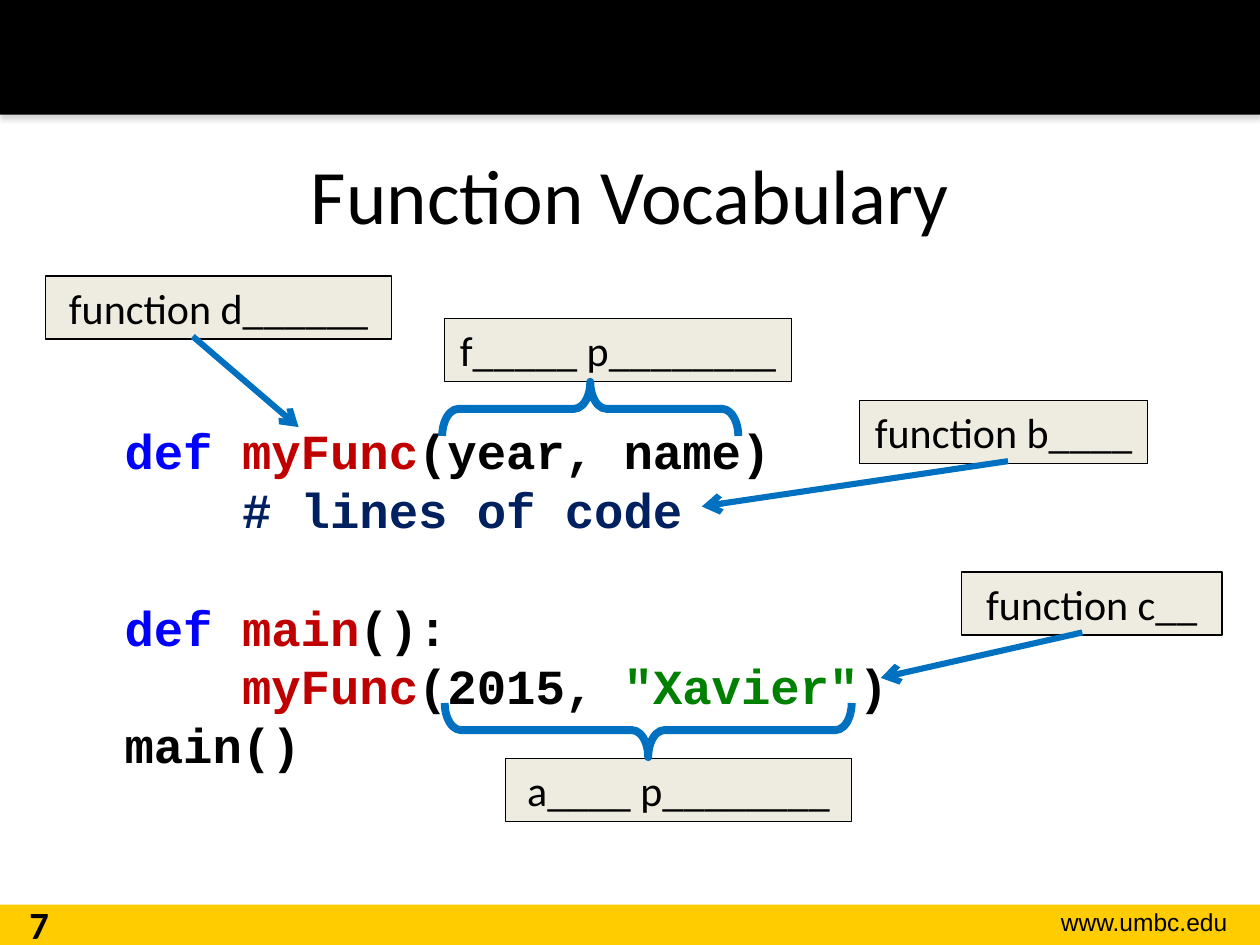
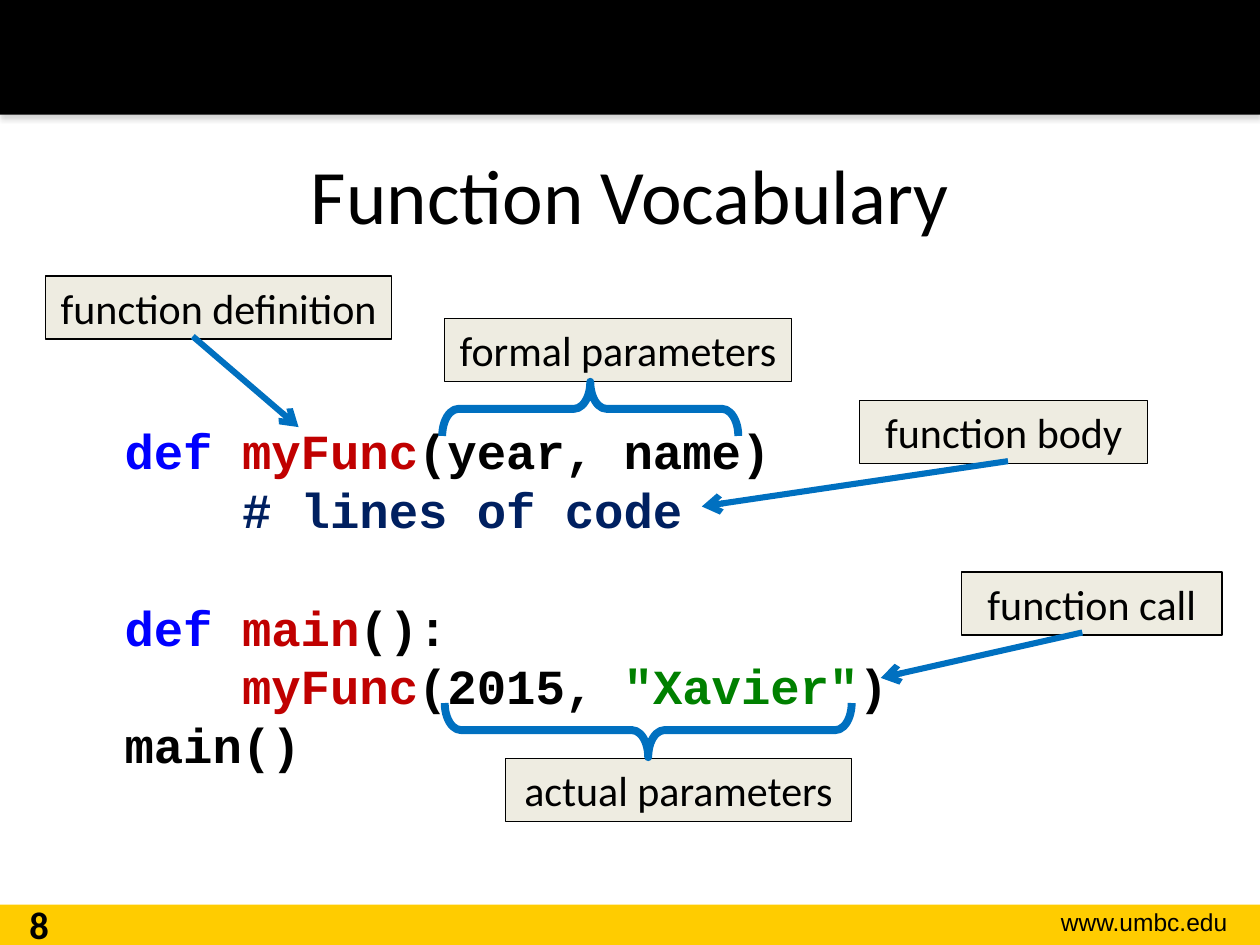
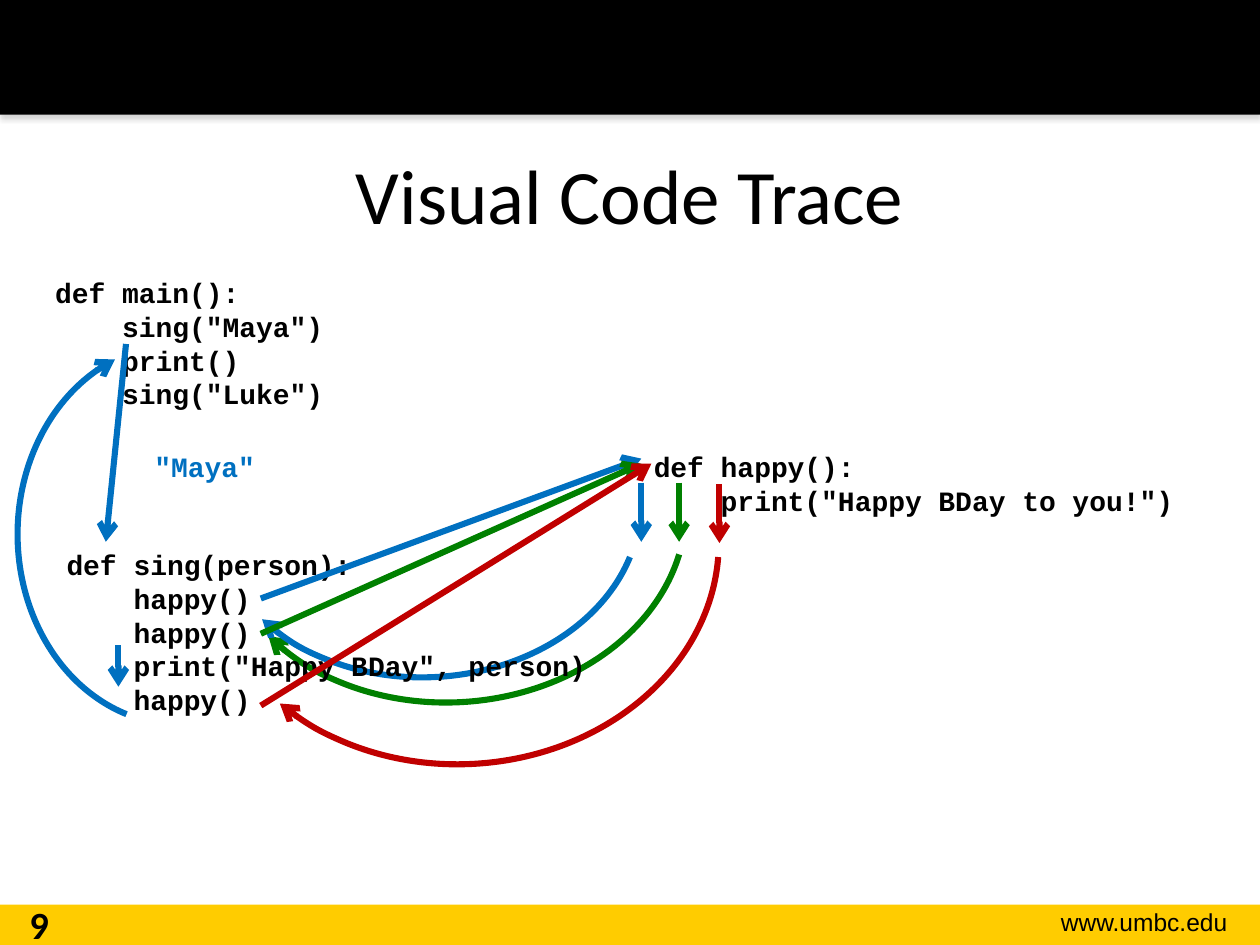
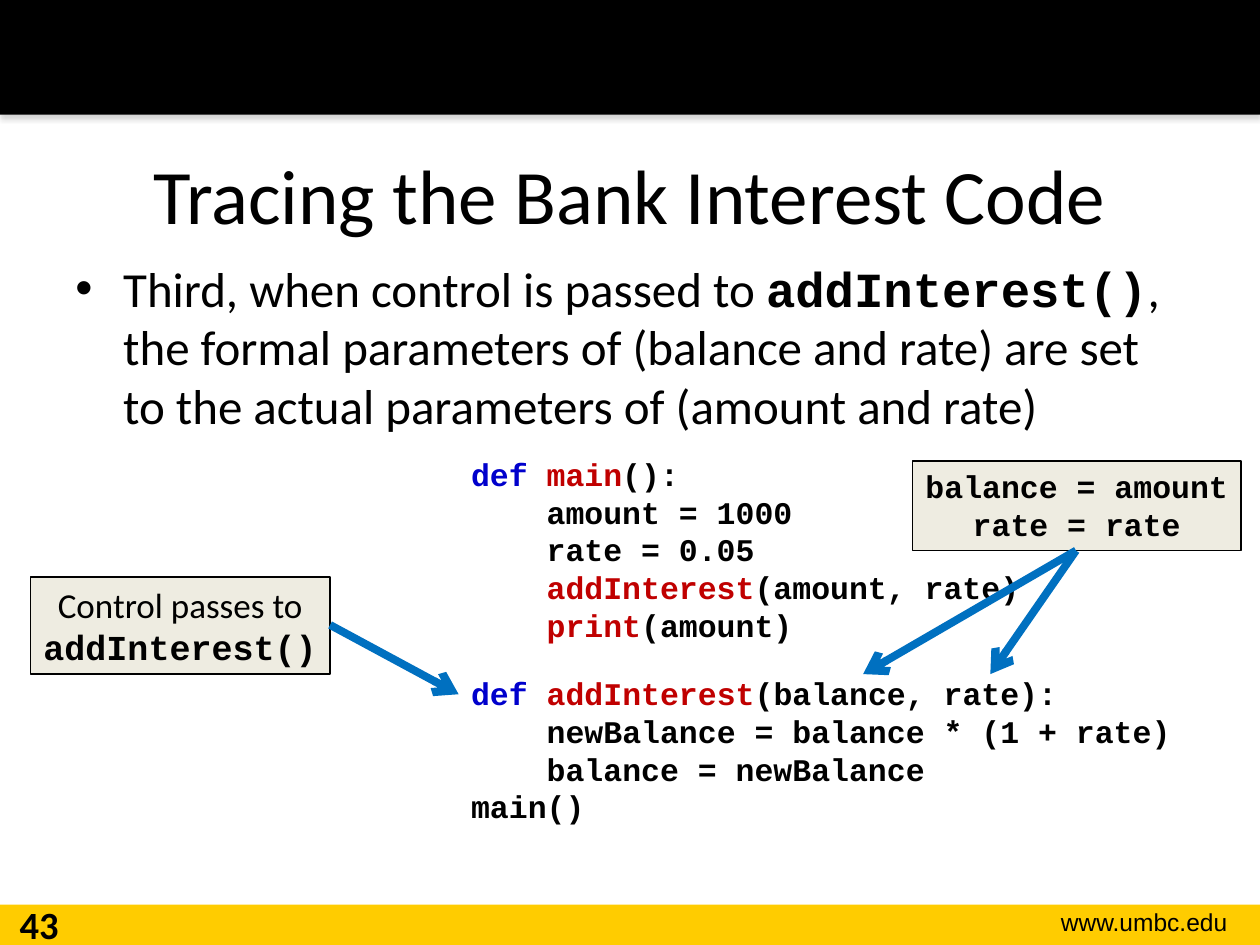
"""Build four lecture slides on function vocabulary and code tracing."""
from lxml import etree
from pptx import Presentation
from pptx.dml.color import RGBColor
from pptx.enum.shapes import MSO_CONNECTOR as Connector, MSO_SHAPE as Shape
from pptx.enum.text import MSO_ANCHOR as Anchor, PP_ALIGN as Align
from pptx.oxml import parse_xml
from pptx.oxml.ns import nsdecls, qn
from pptx.util import Inches, Pt

BLACK = RGBColor(0x00, 0x00, 0x00)
GOLD = RGBColor(0xFF, 0xCC, 0x00)
CREAM = RGBColor(0xEE, 0xEC, 0xE1)
BLUE = RGBColor(0x00, 0x70, 0xC0)
GREEN = RGBColor(0x00, 0x80, 0x00)
RED = RGBColor(0xC0, 0x00, 0x00)
NAVY = RGBColor(0x00, 0x20, 0x60)
BRIGHT_BLUE = RGBColor(0x00, 0x00, 0xFF)
DEEP_BLUE = RGBColor(0x00, 0x00, 0xCC)

PLAIN = {"name": "Calibri", "bold": False, "color": BLACK}
NUMBER = PLAIN | {"bold": True}
FOOTER = PLAIN | {"name": "Arial"}
CODE = {"name": "Courier New", "bold": True, "color": BLACK}
KEYWORD = CODE | {"color": BRIGHT_BLUE}
TRACE_KEYWORD = CODE | {"color": DEEP_BLUE}
NAME = CODE | {"color": RED}
COMMENT = CODE | {"color": NAVY}
STRING = CODE | {"color": GREEN}
ARGUMENT = CODE | {"color": BLUE}


def write(frame, paragraphs, size, align=Align.LEFT):
    """Fill a text frame with paragraphs made of (text, format) spans."""
    frame.word_wrap = True
    for index, spans in enumerate(paragraphs):
        para = frame.paragraphs[0] if index == 0 else frame.add_paragraph()
        para.alignment = align
        for text, style in spans:
            span = para.add_run()
            span.text = text
            span.font.size = Pt(size)
            for key, value in style.items():
                if key == "color":
                    span.font.color.rgb = value
                else:
                    setattr(span.font, key, value)


def stroke(shape, color, width, arrow=True):
    """Give a shape or connector a plain line, with an arrowhead if wanted."""
    shape.line.color.rgb = color
    shape.line.width = Pt(width)
    properties = shape.element.spPr
    if arrow:
        etree.SubElement(properties.find(qn("a:ln")), qn("a:tailEnd"), type="arrow")
    etree.SubElement(properties, qn("a:effectLst"))


deck = Presentation()
deck.slide_width, deck.slide_height = Inches(10), Inches(7.5)
layout = deck.slide_layouts[5]

pages = []
for title, number in [
    ("Function Vocabulary", 7),
    ("Function Vocabulary", 8),
    ("Visual Code Trace", 9),
    ("Tracing the Bank Interest Code", 43),
]:
    page = deck.slides.add_slide(layout)
    heading = page.shapes.title
    heading.left, heading.top = Inches(0.5), Inches(0.91)
    heading.width, heading.height = Inches(9), Inches(1.25)
    heading.text_frame.vertical_anchor = Anchor.MIDDLE
    write(heading.text_frame, [[(title, PLAIN)]], 44, Align.CENTER)
    box = page.shapes.add_textbox(0, Inches(7.1), Inches(0.62), Inches(0.4))
    write(box.text_frame, [[(str(number), NUMBER)]], 22, Align.CENTER)
    pages.append(page)
blanks_page, answers_page, song_page, interest_page = pages

shared = []
for top, height, color in [(7.18, 0.32, GOLD), (0, 0.91, BLACK)]:
    band = blanks_page.shapes.add_shape(
        Shape.RECTANGLE, 0, Inches(top), deck.slide_width, Inches(height))
    band.shadow.inherit = False
    band.fill.solid()
    band.fill.fore_color.rgb = color
    band.line.fill.background()
    shared.append(band)
shared[-1].element.spPr.find(qn("a:effectLst")).append(parse_xml(
    f'<a:outerShdw {nsdecls("a")} blurRad="{Pt(3.1)}" dist="{Pt(1.8)}" dir="5400000" '
    'rotWithShape="0"><a:srgbClr val="808080"><a:alpha val="35000"/></a:srgbClr>'
    '</a:outerShdw>'))
address = blanks_page.shapes.add_textbox(
    Inches(7.85), Inches(7.15), Inches(1.99), Inches(0.34))
write(address.text_frame, [[("www.umbc.edu", FOOTER)]], 14, Align.RIGHT)
shared.append(address)
for item in shared:
    layout.element.cSld.spTree.append(item.element)

for left, top, width, height, rotation, start, end, color in [
    (2.07, 2.2, 3.01, 3.74, 267.4, 61.74, 143.08, GREEN),
    (2.04, 2.33, 2.69, 3.4, 267.4, 63.72, 143.08, BLUE),
    (0.14, 2.73, 2.56, 3.02, 0, 63.72, 149.96, BLUE),
    (1.93, 2.29, 3.46, 4.09, 267.4, 57, 139, RED),
]:
    arc = song_page.shapes.add_shape(
        Shape.ARC, Inches(left), Inches(top), Inches(width), Inches(height))
    arc.rotation = rotation
    arc.adjustments[0], arc.adjustments[1] = start, end
    arc.fill.background()
    stroke(arc, color, 3.5)

vocabulary_code = [
    [("def ", KEYWORD), ("myFunc", NAME), ("(year, name)", CODE)],
    [("    ", CODE), ("# lines of code", COMMENT)],
    [("def ", KEYWORD), ("main", NAME), ("():", CODE)],
    [("    ", CODE), ("myFunc", NAME), ("(2015, ", CODE), ('"Xavier"', STRING), (")", CODE)],
    [("main()", CODE)],
]
for page in (blanks_page, answers_page):
    box = page.shapes.add_textbox(Inches(0.89), Inches(3.29), Inches(8.21), Inches(2.93))
    write(box.text_frame, vocabulary_code, 28)
    box.text_frame.paragraphs[2].space_before = Pt(33.5)

for left, top, width, height, lines in [
    (0.34, 2.14, 2.8, 1.18,
     ["def main():", '    sing("Maya")', "    print()", '    sing("Luke")']),
    (0.43, 4.3, 4.44, 1.45,
     ["def sing(person):", "    happy()", "    happy()",
      '    print("Happy BDay", person)', "    happy()"]),
    (5.09, 3.52, 4.41, 0.64, ["def happy():", '    print("Happy BDay to you!")']),
]:
    box = song_page.shapes.add_textbox(
        Inches(left), Inches(top), Inches(width), Inches(height))
    write(box.text_frame, [[(line, CODE)] for line in lines], 16)
box = song_page.shapes.add_textbox(Inches(0.89), Inches(3.52), Inches(1.47), Inches(0.37))
write(box.text_frame, [[('"Maya"', ARGUMENT)]], 16, Align.CENTER)

body = interest_page.shapes.add_textbox(Inches(0.5), Inches(2), Inches(9), Inches(4.94))
bullet = body.text_frame.paragraphs[0]
indent = bullet.element.get_or_add_pPr() if hasattr(bullet, "element") else bullet._p.get_or_add_pPr()
indent.set("marL", str(Inches(0.38)))
indent.set("indent", str(Inches(-0.38)))
etree.SubElement(indent, qn("a:buFont"), typeface="Arial")
etree.SubElement(indent, qn("a:buChar"), char="•")
write(body.text_frame, [[
    ("Third, when control is passed to ", PLAIN),
    ("addInterest()", CODE),
    (", the formal parameters of (balance and rate) are set "
     "to the actual parameters of (amount and rate)", PLAIN),
]], 28)

for top, width, height, paragraphs in [
    (3.56, 4.57, 1.62, [
        [("def ", TRACE_KEYWORD), ("main", NAME), ("():", CODE)],
        [("    amount = 1000", CODE)],
        [("    rate = 0.05", CODE)],
        [("    ", CODE), ("addInterest", NAME), ("(amount, rate)", CODE)],
        [("    ", CODE), ("print", NAME), ("(amount)", CODE)],
    ]),
    (5.3, 5.78, 1.31, [
        [("def ", TRACE_KEYWORD), ("addInterest", NAME), ("(balance, rate):", CODE)],
        [("    newBalance = balance * (1 + rate)", CODE)],
        [("    balance = newBalance", CODE)],
        [("main()", CODE)],
    ]),
]:
    box = interest_page.shapes.add_textbox(
        Inches(3.64), Inches(top), Inches(width), Inches(height))
    write(box.text_frame, paragraphs, 18)

callouts = [
    (interest_page, 0.24, 4.58, 2.38, 0.77, 20,
     [[("Control passes to ", PLAIN), ("addInterest()", CODE)]]),
    (interest_page, 7.24, 3.66, 2.61, 0.71, 18,
     [[("balance = amount", CODE)], [("rate = rate", CODE)]]),
]
for left, top, width, blank, answer in [
    (0.36, 2.19, 2.75, "function d______", "function definition"),
    (3.53, 2.53, 2.75, "f_____ p________", "formal parameters"),
    (4.01, 6.02, 2.75, "a____ p________", "actual parameters"),
    (6.82, 3.18, 2.29, "function b____", "function body"),
    (7.63, 4.54, 2.07, "function c__", "function call"),
]:
    for page, label in ((blanks_page, blank), (answers_page, answer)):
        callouts.append((page, left, top, width, 0.5, 24, [[(label, PLAIN)]]))
for page, left, top, width, height, size, paragraphs in callouts:
    callout = page.shapes.add_shape(
        Shape.RECTANGLE, Inches(left), Inches(top), Inches(width), Inches(height))
    callout.fill.solid()
    callout.fill.fore_color.rgb = CREAM
    stroke(callout, BLACK, 0.75, arrow=False)
    callout.text_frame.vertical_anchor = Anchor.TOP
    write(callout.text_frame, paragraphs, size, Align.CENTER)

for page in (blanks_page, answers_page):
    for left, top, height, rotation in [(4.47, 2.07, 2.35, 90), (4.93, 4.18, 3.23, 270)]:
        brace = page.shapes.add_shape(
            Shape.RIGHT_BRACE, Inches(left), Inches(top), Inches(0.43), Inches(height))
        brace.rotation = rotation
        brace.element.spPr.find(qn("a:xfrm")).set("flipH", "1")
        brace.adjustments[0] = 0.3
        brace.fill.background()
        stroke(brace, BLUE, 4.5, arrow=False)

vocabulary_arrows = [
    (1.53, 2.67, 2.37, 3.39, BLUE),
    (8, 3.66, 5.57, 4.02, BLUE),
    (8.59, 5.02, 6.99, 5.38, BLUE),
]
song_arrows = [
    (1, 2.73, 0.84, 4.3, BLUE),
    (2.07, 4.75, 5.09, 3.64, BLUE),
    (5.09, 3.83, 5.09, 4.3, BLUE),
    (2.07, 5.03, 5.09, 3.68, GREEN),
    (5.39, 3.83, 5.39, 4.3, GREEN),
    (2.07, 5.6, 5.17, 3.68, RED),
    (5.71, 3.84, 5.71, 4.31, RED),
    (0.94, 5.12, 0.94, 5.45, BLUE),
]
interest_arrows = [
    (2.62, 4.96, 3.64, 5.51, BLUE),
    (8.54, 4.37, 6.85, 5.35, BLUE),
    (8.54, 4.37, 7.86, 5.35, BLUE),
]
for page, arrows, width in [
    (blanks_page, vocabulary_arrows, 3.5),
    (answers_page, vocabulary_arrows, 3.5),
    (song_page, song_arrows, 3.5),
    (interest_page, interest_arrows, 4.5),
]:
    for *ends, color in arrows:
        arrow = page.shapes.add_connector(Connector.STRAIGHT, *map(Inches, ends))
        stroke(arrow, color, width)

deck.save("out.pptx")
